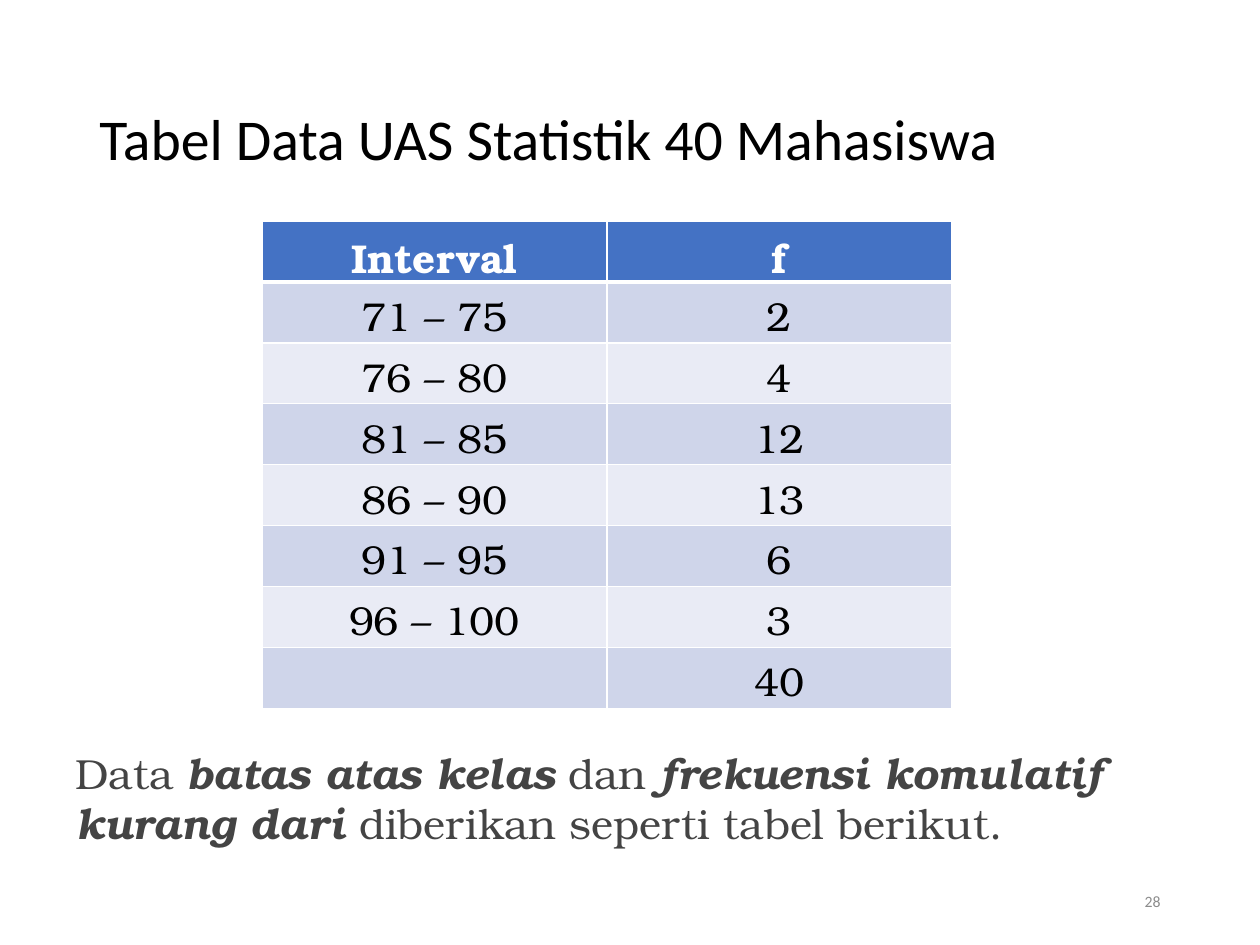
from dataclasses import dataclass

from lxml import etree
from pptx import Presentation
from pptx.dml.color import RGBColor
from pptx.enum.text import MSO_ANCHOR, PP_ALIGN
from pptx.oxml.ns import qn
from pptx.util import Emu, Pt

LEFT, CENTER, RIGHT = PP_ALIGN.LEFT, PP_ALIGN.CENTER, PP_ALIGN.RIGHT
TOP, MIDDLE = MSO_ANCHOR.TOP, MSO_ANCHOR.MIDDLE
SCALE = 914400 / 126
BLANK_LAYOUT = 6


@dataclass(frozen=True)
class Theme:
    """Fonts, colours and type sizes of the slide."""
    sans: str = "Calibri"
    serif: str = "TeX Gyre Bonum"
    ink: str = "000000"
    white: str = "FFFFFF"
    note: str = "444444"
    muted: str = "8C8C8C"
    header: str = "4472C4"
    bands: tuple = ("CFD5EA", "E9EBF5")
    title_size: int = 33
    table_size: int = 23
    note_size: int = 24
    number_size: int = 9


THEME = Theme()
ROWS = [
    ("Interval", "f"),
    ("71 – 75", "2"),
    ("76 – 80", "4"),
    ("81 – 85", "12"),
    ("86 – 90", "13"),
    ("91 – 95", "6"),
    ("96 – 100", "3"),
    ("", "40"),
]
NOTE = [
    ("Data ", False),
    ("batas atas kelas", True),
    (" dan ", False),
    ("frekuensi komulatif kurang dari ", True),
    ("diberikan seperti tabel berikut.", False),
]


def px(length):
    """Turn pixels into EMU."""
    return Emu(round(length * SCALE))


def add_span(para, text, *, font, size, color, bold=False, italic=False):
    """Append formatted text to a paragraph."""
    span = para.add_run()
    span.text = text
    span.font.name = font
    span.font.size = Pt(size)
    span.font.color.rgb = RGBColor.from_string(color)
    span.font.bold = bold
    span.font.italic = italic


def add_text_box(page, box, *, align=LEFT, anchor=TOP, line_spacing=None):
    """Place a wrapping text box and return its first paragraph."""
    frame = page.shapes.add_textbox(*map(px, box)).text_frame
    frame.word_wrap = True
    frame.vertical_anchor = anchor
    para = frame.paragraphs[0]
    para.alignment = align
    para.line_spacing = line_spacing
    return para


def set_borders(cell, color, widths):
    """Draw the cell borders, given as points in left, right, top, bottom order."""
    properties = cell._tc.get_or_add_tcPr()
    for index, (side, width) in enumerate(zip("LRTB", widths)):
        line = etree.Element(qn(f"a:ln{side}"), w=str(Pt(width)))
        fill = etree.SubElement(line, qn("a:solidFill"))
        etree.SubElement(fill, qn("a:srgbClr"), val=color)
        properties.insert(index, line)


def add_title(page, box):
    """Place the slide title."""
    para = add_text_box(page, box, anchor=MIDDLE, line_spacing=0.9)
    add_span(para, "Tabel Data UAS Statistik 40 Mahasiswa",
             font=THEME.sans, size=THEME.title_size, color=THEME.ink)


def add_frequency_table(page, box, row_height):
    """Place the frequency table with a header and banded rows."""
    frame = page.shapes.add_table(len(ROWS), len(ROWS[0]), *map(px, box))
    table = frame.table
    for row_index, values in enumerate(ROWS):
        is_header = row_index == 0
        table.rows[row_index].height = px(row_height)
        fill = THEME.header if is_header else THEME.bands[(row_index - 1) % 2]
        top = 3 if row_index == 1 else 1
        bottom = 3 if is_header else 1
        for column_index, value in enumerate(values):
            cell = table.cell(row_index, column_index)
            cell.fill.solid()
            cell.fill.fore_color.rgb = RGBColor.from_string(fill)
            set_borders(cell, THEME.white, (1, 1, top, bottom))
            para = cell.text_frame.paragraphs[0]
            para.alignment = CENTER
            if value:
                add_span(para, value, font=THEME.serif, size=THEME.table_size,
                         color=THEME.white if is_header else THEME.ink,
                         bold=is_header)
    frame.height = px(box[3])


def add_note(page, box):
    """Place the sentence below the table with its emphasised terms."""
    para = add_text_box(page, box)
    for text, strong in NOTE:
        add_span(para, text, font=THEME.serif, size=THEME.note_size,
                 color=THEME.note, bold=strong, italic=strong)


def add_page_number(page, box):
    """Place the page number."""
    para = add_text_box(page, box, align=RIGHT, anchor=MIDDLE)
    add_span(para, "28", font=THEME.sans, size=THEME.number_size, color=THEME.muted)


def main():
    """Build the deck and save it."""
    deck = Presentation()
    deck.slide_width, deck.slide_height = px(1260), px(945)
    page = deck.slides.add_slide(deck.slide_layouts[BLANK_LAYOUT])
    add_title(page, (87, 50, 1086, 183))
    add_frequency_table(page, (262, 221, 690, 488), row_height=52)
    add_page_number(page, (890, 876, 283, 50))
    add_note(page, (63, 741, 1134, 115))
    deck.save("out.pptx")


if __name__ == "__main__":
    main()
